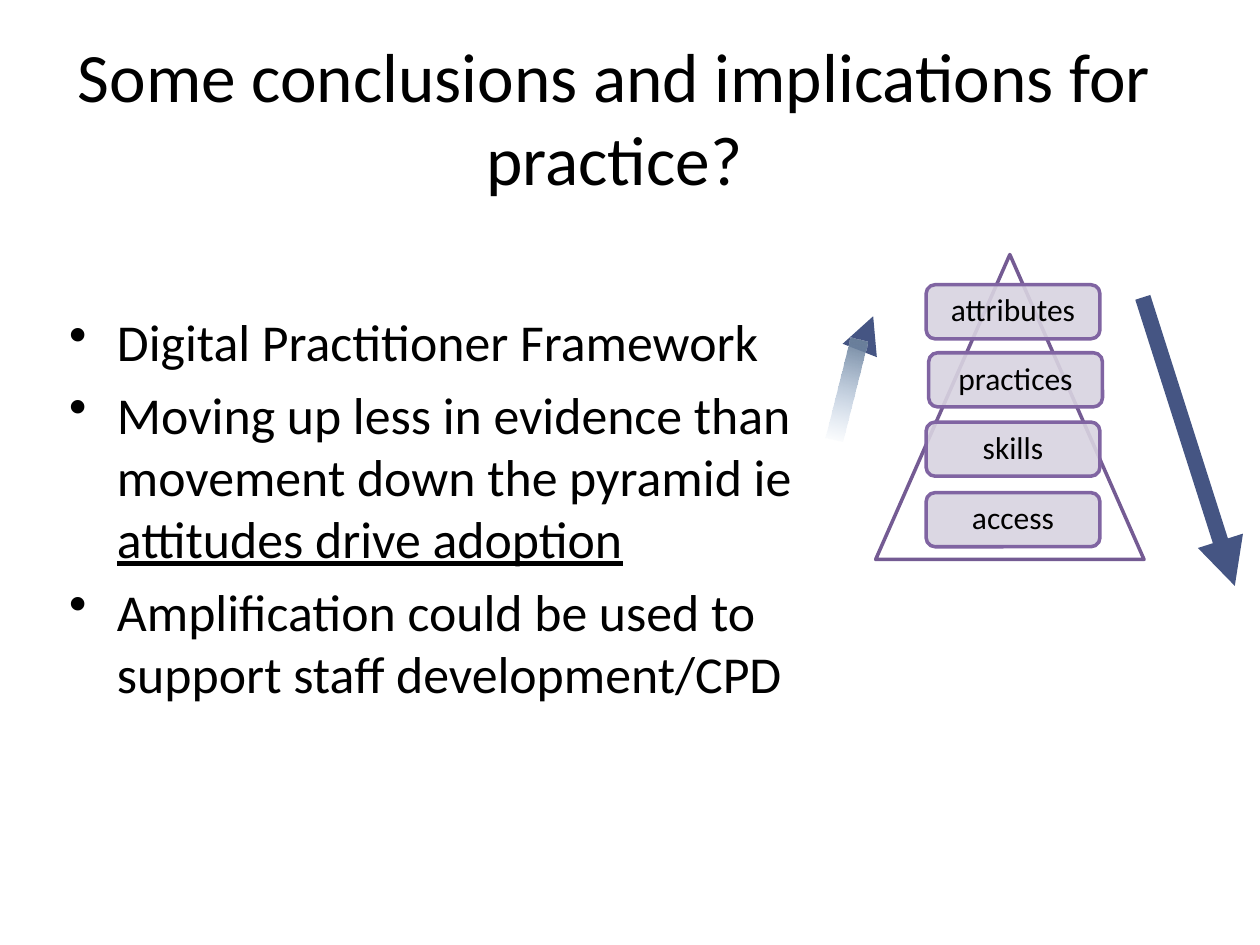
from typing import NamedTuple

from lxml.etree import SubElement
from pptx import Presentation
from pptx.dml.color import RGBColor
from pptx.enum.shapes import MSO_CONNECTOR, MSO_SHAPE
from pptx.enum.text import MSO_ANCHOR, PP_ALIGN
from pptx.oxml.ns import qn
from pptx.util import Inches, Pt

FONT = "Calibri"
COLORS = {
    "text": "000000",
    "white": "FFFFFF",
    "edge": "745B93",
    "border": "8064A2",
    "level": "D8D3E0",
    "arrow": "455583",
    "dark": "6B809A",
    "pale": "95B3D7",
}


class Level(NamedTuple):
    label: str
    left: float
    top: float


class Arrow(NamedTuple):
    start: tuple[float, float]
    end: tuple[float, float]
    width: float


LEVELS = [
    Level("attributes", 7.35, 2.26),
    Level("practices", 7.37, 2.8),
    Level("skills", 7.35, 3.35),
    Level("access", 7.35, 3.91),
]
UP = Arrow((6.84, 2.74), (6.93, 2.51), 7)
DOWN = Arrow((9.07, 2.36), (9.8, 4.65), 9)
# Each point is a list of (text, underlined) runs.
POINTS = [
    [("Digital Practitioner Framework", False)],
    [
        ("Moving up less in evidence than movement down the pyramid ie ", False),
        ("attitudes drive adoption", True),
    ],
    [("Amplification could be used to support staff development/CPD", False)],
]


def color(name: str) -> RGBColor:
    return RGBColor.from_string(COLORS[name])


def set_font(par, size: float) -> None:
    par.font.name = FONT
    par.font.size = Pt(size)
    par.font.color.rgb = color("text")


def set_alpha(fill, percent: int) -> None:
    """Set the opacity of a colour element's parent."""
    SubElement(fill[0], qn("a:alpha"), val=str(percent * 1000))


def add_box(slide, left: float, top: float, width: float, height: float):
    box = slide.shapes.add_textbox(
        Inches(left), Inches(top), Inches(width), Inches(height))
    box.text_frame.word_wrap = True
    return box.text_frame


def add_shape(slide, kind, left: float, top: float, width: float, height: float):
    shape = slide.shapes.add_shape(
        kind, Inches(left), Inches(top), Inches(width), Inches(height))
    shape.shadow.inherit = False
    return shape


def paint(shape, fill: str, line: str) -> None:
    shape.fill.solid()
    shape.fill.fore_color.rgb = color(fill)
    shape.line.color.rgb = color(line)
    shape.line.width = Pt(2)


def add_title(slide, text: str) -> None:
    frame = add_box(slide, 0.5, 0.3, 8.75, 1.25)
    frame.vertical_anchor = MSO_ANCHOR.MIDDLE
    par = frame.paragraphs[0]
    par.text = text
    par.alignment = PP_ALIGN.CENTER
    set_font(par, 39.6)


def add_points(slide) -> None:
    frame = add_box(slide, 0.45, 2.41, 6.12, 3.94)
    for i, point in enumerate(POINTS):
        par = frame.add_paragraph() if i else frame.paragraphs[0]
        par.space_before = Pt(6)
        set_font(par, 29.6)
        props = par._p.get_or_add_pPr()
        props.set("marL", str(Inches(0.38)))
        props.set("indent", str(-Inches(0.38)))
        bullet = props.makeelement(qn("a:buChar"), {"char": "•"})
        props.find(qn("a:defRPr")).addprevious(bullet)
        for text, lined in point:
            run = par.add_run()
            run.text = text
            if lined:
                run.font.underline = True


def add_level(slide, level: Level) -> None:
    shape = add_shape(
        slide, MSO_SHAPE.ROUNDED_RECTANGLE, level.left, level.top, 1.38, 0.43)
    paint(shape, "level", "border")
    set_alpha(shape._element.spPr.find(qn("a:solidFill")), 90)
    frame = shape.text_frame
    frame.margin_left = frame.margin_right = Inches(0.07)
    frame.margin_top = frame.margin_bottom = Inches(0.07)
    frame.vertical_anchor = MSO_ANCHOR.MIDDLE
    par = frame.paragraphs[0]
    par.text = level.label
    par.alignment = PP_ALIGN.CENTER
    par.line_spacing = 0.9
    set_font(par, 18)


def add_arrow(slide, arrow: Arrow) -> None:
    ends = [Inches(v) for v in (*arrow.start, *arrow.end)]
    line = slide.shapes.add_connector(MSO_CONNECTOR.STRAIGHT, *ends)
    line.line.color.rgb = color("arrow")
    line.line.width = Pt(arrow.width)
    SubElement(line.line._get_or_add_ln(), qn("a:tailEnd"), type="triangle")
    SubElement(line._element.spPr, qn("a:effectLst"))


def add_fade(slide) -> None:
    """Draw the shaft of the upward arrow, fading out at its foot."""
    shaft = add_shape(slide, MSO_SHAPE.RECTANGLE, 6.65, 2.68, 0.14, 0.82)
    shaft.rotation = 14
    shaft.line.fill.background()
    shaft.fill.gradient()
    shaft.fill.gradient_angle = 270
    for stop, name in zip(shaft.fill.gradient_stops, ("dark", "pale")):
        stop.color.rgb = color(name)
    stops = shaft._element.spPr.findall(".//" + qn("a:gs"))
    set_alpha(stops[-1], 0)


def main() -> None:
    deck = Presentation()
    deck.slide_width, deck.slide_height = Inches(10), Inches(7.5)
    slide = deck.slides.add_slide(deck.slide_layouts[6])
    add_title(slide, "Some conclusions and implications for practice?")
    add_points(slide)
    pyramid = add_shape(
        slide, MSO_SHAPE.ISOSCELES_TRIANGLE, 6.95, 2.02, 2.13, 2.42)
    paint(pyramid, "white", "edge")
    for level in LEVELS:
        add_level(slide, level)
    add_arrow(slide, UP)
    add_fade(slide)
    add_arrow(slide, DOWN)
    deck.save("out.pptx")


if __name__ == "__main__":
    main()
